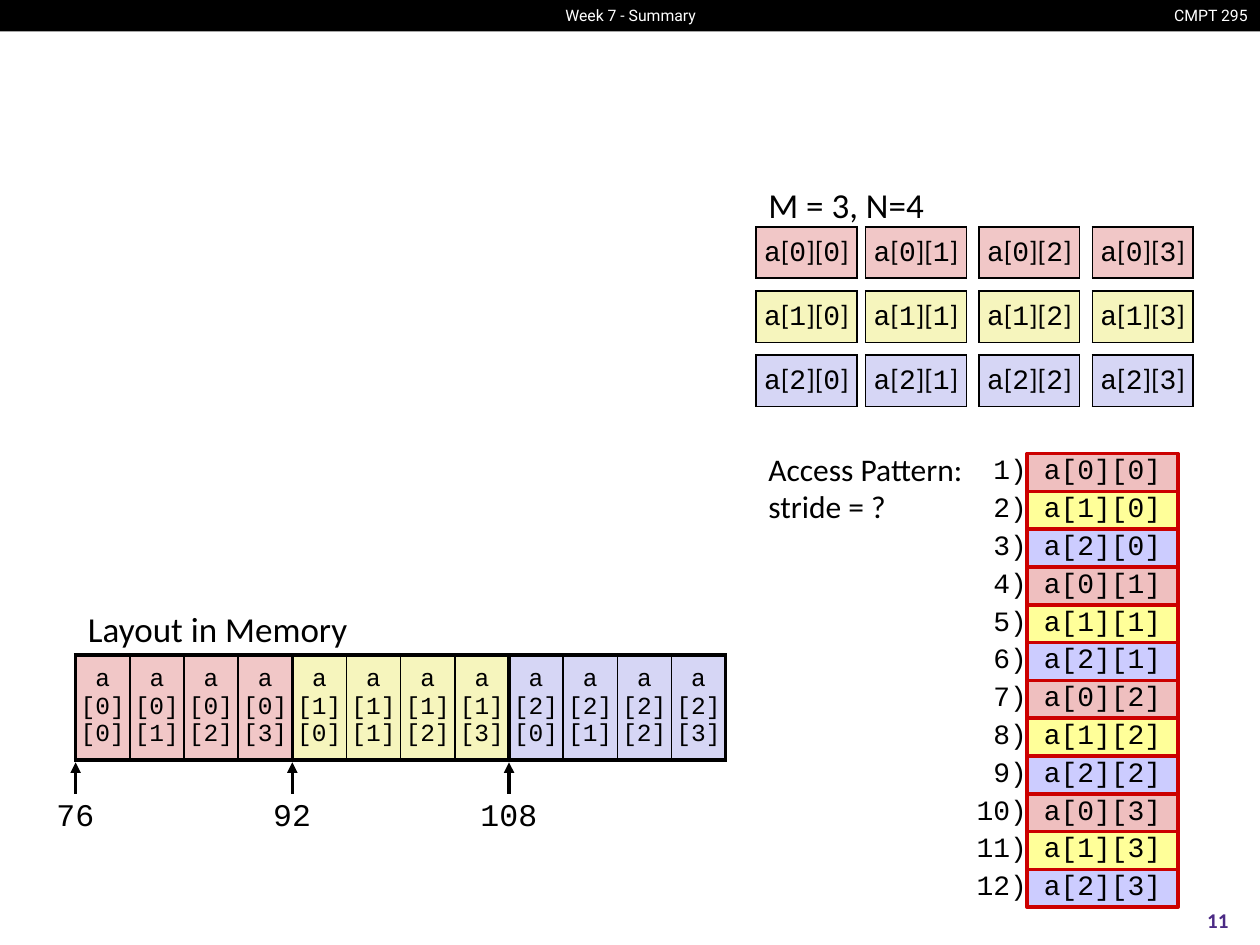
"""Build the slide on the memory layout and access order of a 3 by 4 array."""
from lxml.etree import SubElement as Sub
from pptx import Presentation
from pptx.dml.color import RGBColor as RGB
from pptx.enum.shapes import MSO_CONNECTOR as Link, MSO_SHAPE as Shape
from pptx.enum.text import MSO_ANCHOR as Anchor, PP_ALIGN as Align
from pptx.oxml.ns import qn
from pptx.util import Pt

BLACK = RGB(0, 0, 0)
WHITE = RGB(255, 255, 255)
PURPLE = RGB(0x4B, 0x2A, 0x85)
RED = RGB(0xCC, 0, 0)
PALE = [RGB(0xF1, 0xC7, 0xC7), RGB(0xF6, 0xF5, 0xBD), RGB(0xD6, 0xD6, 0xF5)]
BRIGHT = [RGB(0xEF, 0xBF, 0xBF), RGB(0xFF, 0xFF, 0x99), RGB(0xCC, 0xCC, 0xFF)]
SANS, MONO, ROBOTO = "Calibri", "Courier New", "Roboto"
NO_STYLE = "{2D5ABB26-0587-4C30-8999-92F81FD0307C}"
M, N = 3, 4


def style(run, size, face, color=BLACK, bold=False):
    font = run.font
    font.size, font.name, font.bold = Pt(size), face, bold
    font.color.rgb = color


def add_text(slide, box, text, size, face, color=BLACK, align=Align.LEFT,
             bold=False, anchor=Anchor.TOP):
    frame = slide.shapes.add_textbox(*map(Pt, box)).text_frame
    frame.word_wrap = False
    frame.vertical_anchor = anchor
    frame.text = text
    for para in frame.paragraphs:
        para.alignment = align
        for run in para.runs:
            style(run, size, face, color, bold)


def add_box(slide, box, fill, edge=None):
    shape = slide.shapes.add_shape(Shape.RECTANGLE, *map(Pt, box))
    shape.shadow.inherit = False
    shape.fill.solid()
    shape.fill.fore_color.rgb = fill
    if edge is None:
        shape.line.fill.background()
    else:
        shape.line.color.rgb = edge
        shape.line.width = Pt(2)


def add_arrow(slide, x, start, end):
    line = slide.shapes.add_connector(Link.STRAIGHT, Pt(x), Pt(start), Pt(x), Pt(end))
    line.line.color.rgb = BLACK
    line.line.width = Pt(2)
    Sub(line.line._get_or_add_ln(), qn("a:tailEnd"), type="triangle")
    Sub(line._element.spPr, qn("a:effectLst"))


def add_grid(slide, left, top, cols, rows):
    frame = slide.shapes.add_table(len(rows), len(cols), Pt(left), Pt(top),
                                   Pt(sum(cols)), Pt(sum(rows)))
    table = frame.table
    table.first_row = table.horz_banding = False
    table._tbl.tblPr.find(qn("a:tableStyleId")).text = NO_STYLE
    for col, width in zip(table.columns, cols):
        col.width = Pt(width)
    for row, height in zip(table.rows, rows):
        row.height = Pt(height)
    for cell in table.iter_cells():
        cell.margin_left = cell.margin_right = 0
        cell.margin_top = cell.margin_bottom = 0
        cell.vertical_anchor = Anchor.MIDDLE
    return table


def set_edges(cell, **widths):
    for side in "LRTB":
        if side in widths:
            line = Sub(cell._tc.get_or_add_tcPr(), qn("a:ln" + side),
                       w=str(Pt(widths[side])))
            fill = Sub(line, qn("a:solidFill"))
            Sub(fill, qn("a:srgbClr"), val=str(BLACK))


def set_fill(cell, color):
    cell.fill.solid()
    cell.fill.fore_color.rgb = color


def set_cell(cell, text, size, align=Align.CENTER):
    cell.text = text
    para = cell.text_frame.paragraphs[0]
    para.alignment = align
    style(para.runs[0], size, MONO)


def add_header(slide):
    add_box(slide, (0, 0, 720, 18), BLACK)
    add_text(slide, (661.7, 0, 58.3, 18), "CMPT 295", 9, ROBOTO, WHITE, Align.RIGHT)
    add_text(slide, (309.6, 0, 101.5, 18), "Week 7 - Summary", 9, ROBOTO, WHITE,
             Align.CENTER)
    add_text(slide, (671.8, 511.2, 48.2, 28.8), "11", 12, SANS, PURPLE, Align.CENTER,
             True, Anchor.MIDDLE)


def add_layout(slide):
    left, width = 43.2, 30.96
    add_text(slide, (left, 343.4, 167.8, 31.7), "Layout in Memory", 20, SANS)
    table = add_grid(slide, left, 374.4, [width] * (M * N), [59.8])
    for k, cell in enumerate(table.iter_cells()):
        i, j = divmod(k, N)
        set_cell(cell, f"a [{i}] [{j}]", 14)
        set_edges(cell, L=1 if j else 2.25, R=2.25 if j == N - 1 else 1,
                  T=2.25, B=2.25)
        set_fill(cell, PALE[i])
    for i, (label, wide) in enumerate([("76", 36), ("92", 36), ("108", 46.8)]):
        x = left + i * N * width
        add_arrow(slide, x, 453.6, 435.6)
        add_text(slide, (x - wide / 2, 450.7, wide, 28.8), label, 18, MONO)


def add_array(slide):
    add_text(slide, (432, 101.5, 105.1, 31.7), "M = 3, N=4", 20, SANS)
    wide, high, gap = 57.6, 29.4, 7.2
    table = add_grid(slide, 432, 129.6, [wide, 5, wide, gap, wide, gap, wide],
                     [high, gap, high, gap, high])
    for r in range(2 * M - 1):
        for c in range(2 * N - 1):
            cell = table.cell(r, c)
            para = cell.text_frame.paragraphs[0]
            if r % 2 or c % 2:
                Sub(para._p, qn("a:endParaRPr"), sz="100")
                if c % 2 == 0:
                    set_edges(cell, T=1, B=1)
                elif r % 2 == 0:
                    set_edges(cell, L=1, R=1)
                continue
            para.alignment = Align.CENTER
            for k, part in enumerate(["a", "[", str(r // 2), "][", str(c // 2), "]"]):
                run = para.add_run()
                run.text = part
                style(run, 16, SANS if k % 2 else MONO)
            set_edges(cell, L=1, R=1, T=1, B=1)
            set_fill(cell, PALE[r // 2])


def add_access(slide):
    top, high = 259.2, 21.6
    add_text(slide, (432, 253.4, 128.9, 51.1), "Access Pattern:\nstride = ?", 18, SANS)
    for k in range(M * N):
        add_box(slide, (586.8, top + k * high, 86.4, high), BRIGHT[k % M], RED)
    table = add_grid(slide, 550.8, top, [36, 86.4], [high] * (M * N))
    for k in range(M * N):
        j, i = divmod(k, M)
        set_cell(table.cell(k, 0), f"{k + 1})", 16, Align.RIGHT)
        set_cell(table.cell(k, 1), f"a[{i}][{j}]", 16)


def main():
    deck = Presentation()
    deck.slide_width, deck.slide_height = Pt(720), Pt(540)
    slide = deck.slides.add_slide(deck.slide_layouts[6])
    add_header(slide)
    add_layout(slide)
    add_array(slide)
    add_access(slide)
    deck.save("out.pptx")


if __name__ == "__main__":
    main()
